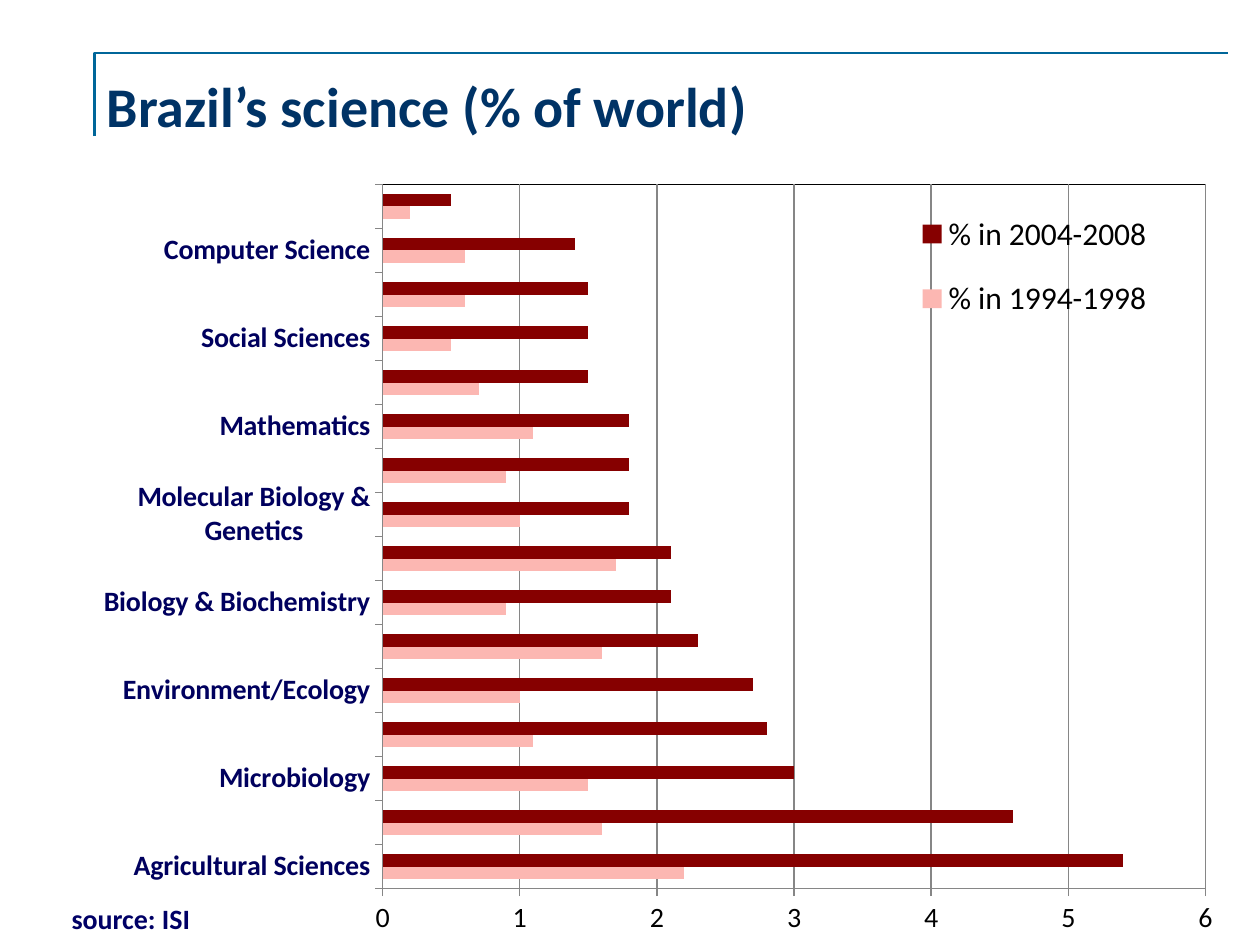
from lxml.etree import SubElement
from pptx import Presentation
from pptx.chart.data import CategoryChartData
from pptx.dml.color import RGBColor
from pptx.enum.chart import XL_CHART_TYPE as ChartType, XL_LEGEND_POSITION as LegendPosition, XL_TICK_MARK as TickMark
from pptx.enum.text import MSO_ANCHOR as Anchor
from pptx.oxml import parse_xml
from pptx.oxml.ns import nsdecls, qn
from pptx.util import Inches, Pt

SHARES = [
    ("Agricultural Sciences", 2.2, 5.4),
    ("", 1.6, 4.6),
    ("Microbiology", 1.5, 3),
    ("", 1.1, 2.8),
    ("Environment/Ecology", 1, 2.7),
    ("", 1.6, 2.3),
    ("Biology & Biochemistry", 0.9, 2.1),
    ("", 1.7, 2.1),
    ("Molecular Biology & Genetics", 1, 1.8),
    ("", 0.9, 1.8),
    ("Mathematics", 1.1, 1.8),
    ("", 0.7, 1.5),
    ("Social Sciences", 0.5, 1.5),
    ("", 0.6, 1.5),
    ("Computer Science", 0.6, 1.4),
    ("", 0.2, 0.5),
]
PERIODS = [("% in 1994-1998", "FCB7B2"), ("% in 2004-2008", "860000")]


def color(hex_value):
    return RGBColor.from_string(hex_value)


def manual_layout(left, top, width, height, inner=False):
    layout = parse_xml(f"<c:layout {nsdecls('c')}><c:manualLayout/></c:layout>")
    settings = [("layoutTarget", "inner")] if inner else []
    settings += [("xMode", "edge"), ("yMode", "edge")]
    settings += [("x", left), ("y", top), ("w", width), ("h", height)]
    for name, value in settings:
        SubElement(layout[0], qn(f"c:{name}")).set("val", str(value))
    return layout


class SlideBuilder:
    font_name = "Calibri"
    grid_color = "868686"

    def __init__(self, slide):
        self.slide = slide

    def style_font(self, font, size, hex_value, bold=False):
        font.name = self.font_name
        font.size = Pt(size)
        font.bold = bold
        font.color.rgb = color(hex_value)

    def add_rule(self, points, hex_value, width):
        start, *others = [(Inches(x), Inches(y)) for x, y in points]
        builder = self.slide.shapes.build_freeform(*start)
        builder.add_line_segments(others, close=False)
        shape = builder.convert_to_shape()
        shape.shadow.inherit = False
        shape.fill.background()
        shape.line.color.rgb = color(hex_value)
        shape.line.width = Pt(width)

    def add_text(self, box, text, size, hex_value, line_spacing=None):
        shape = self.slide.shapes.add_textbox(*map(Inches, box))
        frame = shape.text_frame
        frame.word_wrap = True
        frame.vertical_anchor = Anchor.MIDDLE
        paragraph = frame.paragraphs[0]
        paragraph.line_spacing = line_spacing
        run = paragraph.add_run()
        run.text = text
        self.style_font(run.font, size, hex_value, bold=True)

    def style_axis(self, axis, hex_value, bold=False):
        axis.major_tick_mark = TickMark.OUTSIDE
        axis.minor_tick_mark = TickMark.NONE
        axis.format.line.color.rgb = color(self.grid_color)
        self.style_font(axis.tick_labels.font, 16, hex_value, bold)

    def add_bar_chart(self, box, rows, series_styles):
        data = CategoryChartData()
        categories, *columns = zip(*rows)
        data.categories = categories
        for (name, _), values in zip(series_styles, columns):
            data.add_series(name, values)
        frame = self.slide.shapes.add_chart(ChartType.BAR_CLUSTERED, *map(Inches, box), data)
        chart = frame.chart
        chart.has_title = False
        chart.font.name = "Roboto"
        chart.font.size = Pt(10)
        chart.font.color.rgb = color("000000")

        plot = chart.plots[0]
        plot.gap_width = 150
        plot.overlap = 0
        plot.vary_by_categories = False
        for series, (_, hex_value) in zip(plot.series, series_styles):
            series.format.fill.solid()
            series.format.fill.fore_color.rgb = color(hex_value)

        self.style_axis(chart.category_axis, "00005E", bold=True)
        skip = parse_xml(f'<c:tickLblSkip {nsdecls("c")} val="2"/>')
        chart.category_axis._element.find(qn("c:noMultiLvlLbl")).addprevious(skip)
        value_axis = chart.value_axis
        self.style_axis(value_axis, "000000")
        value_axis.minimum_scale = 0
        value_axis.maximum_scale = 6
        value_axis.major_unit = 1
        value_axis.tick_labels.number_format = "General"
        value_axis.tick_labels.number_format_is_linked = False
        value_axis.major_gridlines.format.line.color.rgb = color(self.grid_color)

        chart.has_legend = True
        legend = chart.legend
        legend.position = LegendPosition.RIGHT
        legend.include_in_layout = False
        self.style_font(legend.font, 18, "000000")
        legend_position = legend._element.find(qn("c:legendPos"))
        legend_position.addnext(manual_layout(0.7, 0.03, 0.22, 0.2))

        plot_area = chart._chartSpace.chart.plotArea
        for layout in plot_area.findall(qn("c:layout")):
            plot_area.remove(layout)
        plot_area.insert(0, manual_layout(0.26, 0.025, 0.694, 0.903, inner=True))
        plot_area.append(parse_xml(
            f'<c:spPr {nsdecls("c", "a")}><a:noFill/><a:ln w="9525"><a:solidFill>'
            '<a:srgbClr val="000000"/></a:solidFill></a:ln></c:spPr>'
        ))


def main():
    presentation = Presentation()
    presentation.slide_width = Inches(10)
    presentation.slide_height = Inches(7.5)
    slide = presentation.slides.add_slide(presentation.slide_layouts[6])
    builder = SlideBuilder(slide)
    builder.add_rule([(0.75, 1.08), (0.75, 0.42), (9.75, 0.42)], "006699", 1.5)
    builder.add_text((0.75, 0.42, 8.92, 0.83), "Brazil’s science (% of world)", 32, "003366")
    builder.add_bar_chart((0.59, 1.31, 9.41, 6.19), SHARES, PERIODS)
    builder.add_text((0.47, 7.11, 1.3, 0.39), "source: ISI", 16, "000066", line_spacing=0.9)
    presentation.save("out.pptx")


if __name__ == "__main__":
    main()
